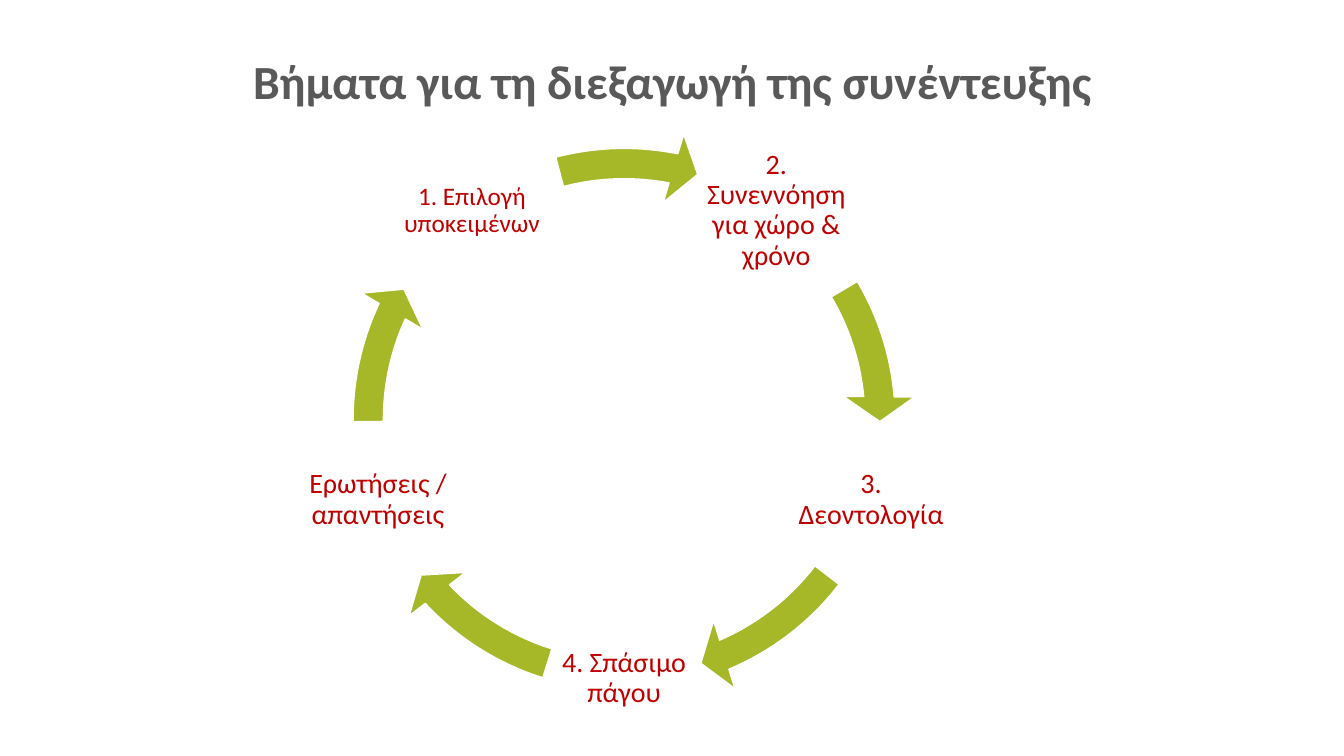
from dataclasses import dataclass

from pptx import Presentation
from pptx.dml.color import RGBColor
from pptx.enum.shapes import MSO_SHAPE as Preset
from pptx.enum.text import MSO_ANCHOR as Anchor, MSO_AUTO_SIZE as AutoSize, PP_ALIGN as Align
from pptx.shapes.autoshape import Shape
from pptx.slide import Slide
from pptx.text.text import TextFrame
from pptx.util import Emu, Pt

EMU_PER_PX = 9144  # 100 px to the inch
FONT = "Calibri"
TITLE_GREY = RGBColor(0x59, 0x59, 0x59)
LABEL_RED = RGBColor(0xC0, 0x00, 0x00)
ARROW_GREEN = RGBColor(0xA6, 0xB7, 0x27)
WHITE = RGBColor(0xFF, 0xFF, 0xFF)

# Ring shared by all arrows
RING_LEFT, RING_TOP, RING_SIZE = 330, 127, 578
BAND_WIDTH, HEAD_WIDTH = 0.052, 0.061
HEAD_DEGREES = 5.59
ADJUSTMENT_PER_DEGREE = 0.6

STEP_HEIGHT = 154
STEP_INSET = 3


@dataclass(frozen=True)
class Step:
    """A label and the arrow, in clockwise degrees, that leaves it."""
    text: str
    left: int
    top: int
    arrow_start: float
    arrow_end: float
    width: int = 154
    size: int = 20


STEPS = [
    Step("1. Επιλογή υποκειμένων", 382, 132, 255.4, 281.13, width=172, size=18),
    Step("2. Συνεννόηση για χώρο & χρόνο", 693, 132, 329.41, 354.92),
    Step("3. Δεοντολογία", 787, 419, 37.53, 66.95),
    Step("4. Σπάσιμο πάγου", 542, 596, 107.46, 136.89),
    Step("Ερωτήσεις / απαντήσεις", 298, 419, 179.49, 205),
]


def px(length: int) -> Emu:
    return Emu(length * EMU_PER_PX)


def write(frame: TextFrame, text: str, size: int, color: RGBColor,
          align: Align, bold: bool = False) -> None:
    frame.word_wrap = True
    frame.auto_size = AutoSize.NONE
    paragraph = frame.paragraphs[0]
    paragraph.alignment = align
    paragraph.line_spacing = 0.9
    run = paragraph.add_run()
    run.text = text
    run.font.name = FONT
    run.font.size = Pt(size)
    run.font.bold = bold
    run.font.color.rgb = color


def place_title(slide: Slide, text: str) -> None:
    title = slide.shapes.title
    title.left, title.top, title.width, title.height = map(px, (241, 33, 1025, 81))
    title.text_frame.vertical_anchor = Anchor.BOTTOM
    write(title.text_frame, text, 34, TITLE_GREY, Align.LEFT, bold=True)


def add_label(slide: Slide, step: Step) -> None:
    box = slide.shapes.add_textbox(
        px(step.left), px(step.top), px(step.width), px(STEP_HEIGHT))
    frame = box.text_frame
    frame.vertical_anchor = Anchor.MIDDLE
    frame.margin_left = frame.margin_right = px(STEP_INSET)
    frame.margin_top = frame.margin_bottom = px(STEP_INSET)
    write(frame, step.text, step.size, LABEL_RED, Align.CENTER)


def add_arrow(slide: Slide, step: Step) -> Shape:
    arrow = slide.shapes.add_shape(
        Preset.CIRCULAR_ARROW, px(RING_LEFT), px(RING_TOP), px(RING_SIZE), px(RING_SIZE))
    angles = (HEAD_DEGREES, step.arrow_end, step.arrow_start)
    values = [BAND_WIDTH, *(angle * ADJUSTMENT_PER_DEGREE for angle in angles), HEAD_WIDTH]
    for index, value in enumerate(values):
        arrow.adjustments[index] = value
    arrow.shadow.inherit = False
    arrow.fill.solid()
    arrow.fill.fore_color.rgb = ARROW_GREEN
    arrow.line.color.rgb = WHITE
    arrow.line.width = Pt(1)
    return arrow


def main() -> None:
    presentation = Presentation()
    presentation.slide_width, presentation.slide_height = px(1333), px(750)
    slide = presentation.slides.add_slide(presentation.slide_layouts.get_by_name("Title Only"))

    # Background and heading
    slide.background.fill.solid()
    slide.background.fill.fore_color.rgb = WHITE
    place_title(slide, "Βήματα για τη διεξαγωγή της συνέντευξης")

    # Cycle of interview steps
    for step in STEPS:
        add_label(slide, step)
        add_arrow(slide, step)

    presentation.save("out.pptx")


if __name__ == "__main__":
    main()
